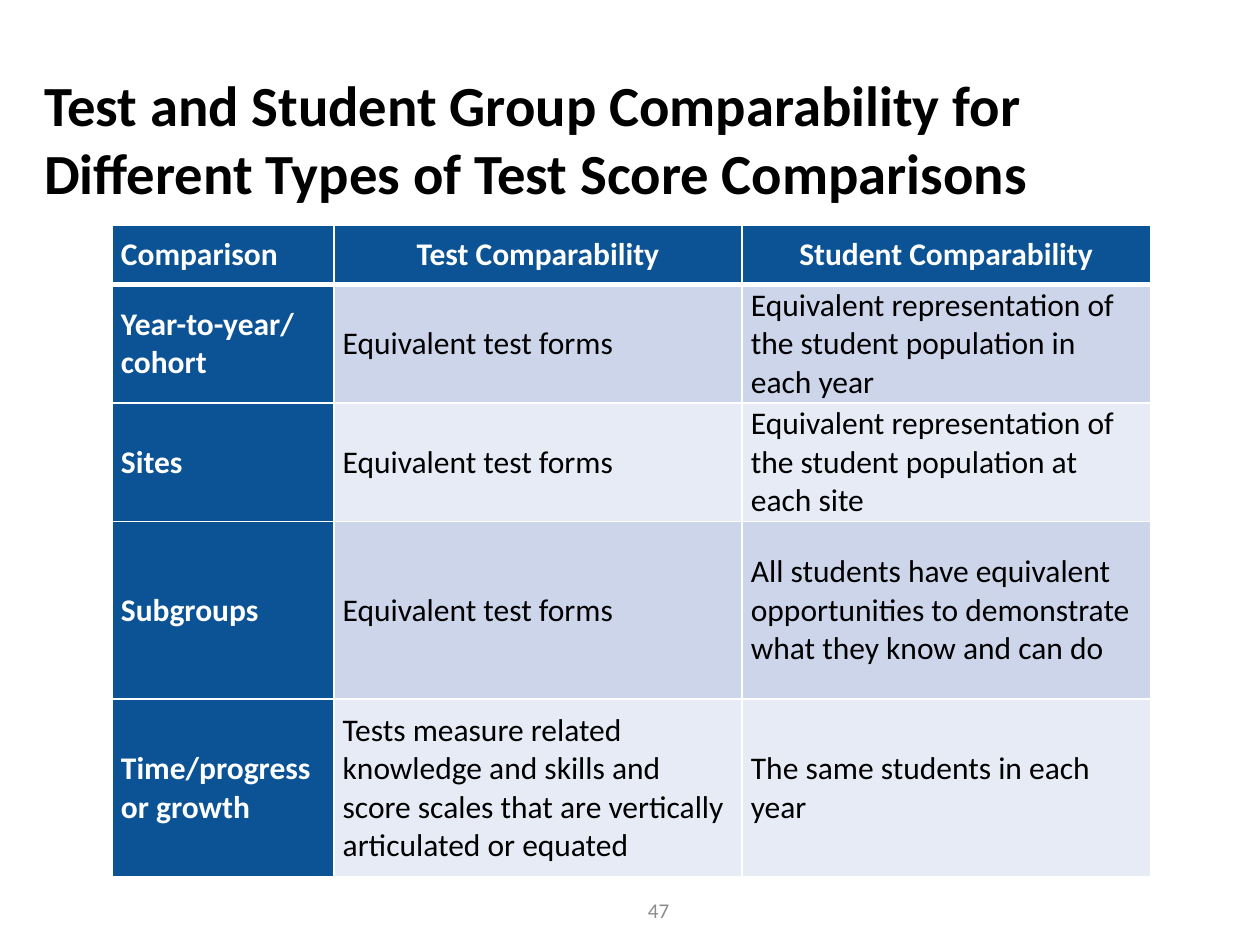
from dataclasses import dataclass

from lxml.etree import SubElement
from pptx import Presentation
from pptx.dml.color import RGBColor
from pptx.enum.text import MSO_ANCHOR as Anchor, MSO_AUTO_SIZE as Fit, PP_ALIGN as Align
from pptx.oxml.ns import qn
from pptx.util import Inches, Pt

FONT = "Calibri"
BLACK = RGBColor(0x00, 0x00, 0x00)
WHITE = RGBColor(0xFF, 0xFF, 0xFF)
GREY = RGBColor(0x8C, 0x8C, 0x8C)
BLUE = RGBColor(0x0B, 0x53, 0x94)
BANDS = (RGBColor(0xCC, 0xD5, 0xEA), RGBColor(0xE7, 0xEB, 0xF5))

WIDTHS = (1.76, 3.24, 3.24)


@dataclass
class Row:
    height: float
    texts: tuple[str, str, str]


HEAD = Row(0.47, ("Comparison", "Test Comparability", "Student Comparability"))
BODY = (
    Row(0.94, ("Year-to-year/cohort", "Equivalent test forms",
               "Equivalent representation of the student population in each year")),
    Row(0.94, ("Sites", "Equivalent test forms",
               "Equivalent representation of the student population at each site")),
    Row(1.41, ("Subgroups", "Equivalent test forms",
               "All students have equivalent opportunities to demonstrate "
               "what they know and can do")),
    Row(1.41, ("Time/progress or growth",
               "Tests measure related knowledge and skills and score scales "
               "that are vertically articulated or equated",
               "The same students in each year")),
)


def style(para, size: float, color: RGBColor, bold: bool, align=Align.LEFT) -> None:
    para.alignment = align
    font = para.font
    font.name, font.size, font.bold = FONT, Pt(size), bold
    font.color.rgb = color


def add_edge(cell, side: str, width: float) -> None:
    props = cell._tc.get_or_add_tcPr()
    line = SubElement(props, qn(f"a:ln{side}"), w=str(Pt(width)))
    fill = SubElement(line, qn("a:solidFill"))
    SubElement(fill, qn("a:srgbClr"), val=str(WHITE))


def fill_cell(cell, text: str, row: int, col: int) -> None:
    head = row == 0
    label = head or col == 0
    cell.text = text
    cell.vertical_anchor = Anchor.MIDDLE
    cell.margin_left = cell.margin_right = Inches(0.07)
    cell.margin_top = cell.margin_bottom = 0
    # Borders come before the fill in the cell properties
    for side in "LRTB":
        thick = (head and side == "B") or (row == 1 and side == "T")
        add_edge(cell, side, 3 if thick else 1)
    cell.fill.solid()
    cell.fill.fore_color.rgb = BLUE if label else BANDS[(row - 1) % 2]
    style(cell.text_frame.paragraphs[0], 18, WHITE if label else BLACK, label,
          Align.CENTER if head and col else Align.LEFT)


def add_grid(slide, rows: tuple[Row, ...]) -> None:
    high = sum(row.height for row in rows)
    table = slide.shapes.add_table(
        len(rows), len(WIDTHS), Inches(0.89), Inches(1.79),
        Inches(sum(WIDTHS)), Inches(high)).table
    for col, width in enumerate(WIDTHS):
        table.columns[col].width = Inches(width)
    for i, row in enumerate(rows):
        table.rows[i].height = Inches(row.height)
        for col, text in enumerate(row.texts):
            fill_cell(table.cell(i, col), text, i, col)


def main() -> None:
    deck = Presentation()
    deck.slide_width, deck.slide_height = Inches(10), Inches(7.5)
    slide = deck.slides.add_slide(deck.slide_layouts[5])

    # Title
    title = slide.shapes.title
    title.left, title.top = Inches(0.25), Inches(0.47)
    title.width, title.height = Inches(9), Inches(1.25)
    frame = title.text_frame
    frame.text = ("Test and Student Group Comparability for "
                  "Different Types of Test Score Comparisons")
    frame.auto_size = Fit.NONE
    frame.vertical_anchor = Anchor.MIDDLE
    style(frame.paragraphs[0], 32.4, BLACK, True)

    # Comparison table
    add_grid(slide, (HEAD, *BODY))

    # Page number
    page = slide.shapes.add_textbox(Inches(3.08), Inches(7.02), Inches(2.33), Inches(0.4))
    frame = page.text_frame
    frame.word_wrap = True
    frame.vertical_anchor = Anchor.MIDDLE
    frame.text = "47"
    style(frame.paragraphs[0], 12, GREY, False, Align.RIGHT)

    deck.save("out.pptx")


if __name__ == "__main__":
    main()
